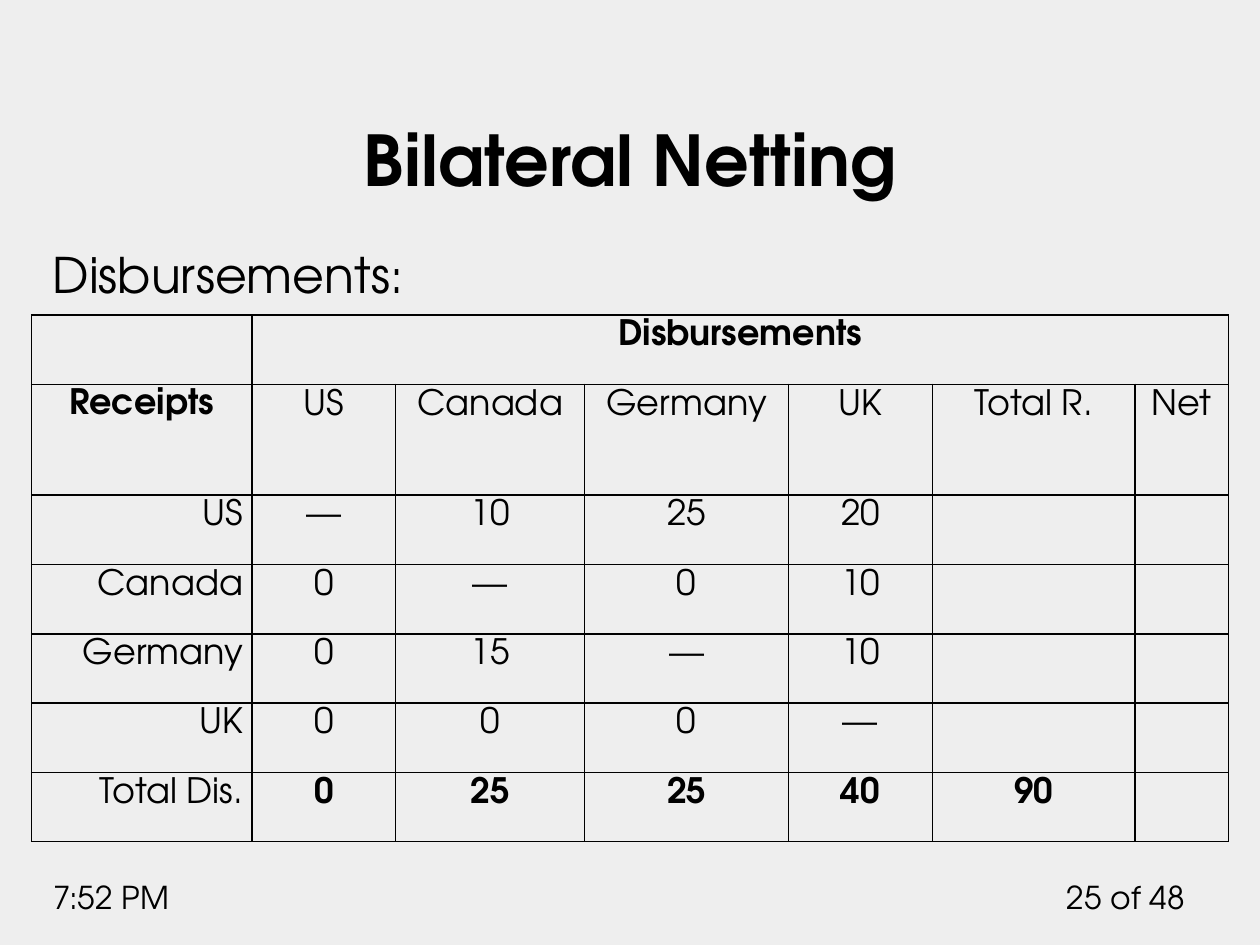
import pptx
import pptx.dml.color
import pptx.enum.text
import pptx.oxml
import pptx.oxml.ns
import pptx.util
from pptx.util import Inches

BLACK = pptx.dml.color.RGBColor(0x00, 0x00, 0x00)
PAPER = pptx.dml.color.RGBColor(0xEE, 0xEE, 0xEE)
FONT = "TeX Gyre Adventor"
ALIGN = pptx.enum.text.PP_ALIGN
ANCHOR = pptx.enum.text.MSO_ANCHOR

COLUMN_WIDTHS = [1.75, 1.14, 1.5, 1.62, 1.14, 1.61, 0.74]
ROW_HEIGHTS = [0.55, 0.88, 0.55, 0.55, 0.55, 0.55, 0.55]
NETTING = [
    ["", "Disbursements", "", "", "", "", ""],
    ["Receipts", "US", "Canada", "Germany", "UK", "Total R.", "Net"],
    ["US", "—", "10", "25", "20", "", ""],
    ["Canada", "0", "—", "0", "10", "", ""],
    ["Germany", "0", "15", "—", "10", "", ""],
    ["UK", "0", "0", "0", "—", "", ""],
    ["Total Dis.", "0", "25", "25", "40", "90", ""],
]


def write(paragraph, text, size=20, bold=False, align=ALIGN.LEFT, spacing=None):
    paragraph.alignment = align
    if spacing:
        paragraph.line_spacing = spacing
    run = paragraph.add_run()
    run.text = text
    run.font.name = FONT
    run.font.size = pptx.util.Pt(size)
    run.font.bold = bold
    run.font.color.rgb = BLACK


def add_title(slide, text):
    title = slide.shapes.title
    title.left, title.top = Inches(0.5), Inches(0.39)
    title.width, title.height = Inches(9), Inches(1.25)
    title.text_frame.vertical_anchor = ANCHOR.BOTTOM
    write(title.text_frame.paragraphs[0], text, size=40, bold=True, align=ALIGN.CENTER)


def add_label(slide, left, top, width, height):
    label = slide.shapes.add_textbox(Inches(left), Inches(top), Inches(width), Inches(height))
    label.text_frame.word_wrap = True
    return label.text_frame.paragraphs[0]


def add_borders(cell):
    properties = cell._tc.get_or_add_tcPr()
    namespace = pptx.oxml.ns.nsdecls("a")
    for position, side in enumerate(("lnL", "lnR", "lnT", "lnB")):
        border = pptx.oxml.parse_xml(
            f'<a:{side} {namespace} w="12700"><a:solidFill>'
            f'<a:srgbClr val="{BLACK}"/></a:solidFill></a:{side}>'
        )
        properties.insert(position, border)


def fill_cell(cell, text, row, column):
    cell.fill.background()
    add_borders(cell)
    if not text:
        return
    cell.margin_left = cell.margin_right = Inches(0.07)
    cell.margin_top = cell.margin_bottom = 0
    is_country = column == 0 and row > 1
    is_total = row == len(NETTING) - 1 and column > 0
    write(
        cell.text_frame.paragraphs[0],
        text,
        bold=is_total or text in ("Disbursements", "Receipts"),
        align=ALIGN.RIGHT if is_country else ALIGN.CENTER,
        spacing=1.15,
    )


def add_netting_table(slide):
    table = slide.shapes.add_table(
        len(ROW_HEIGHTS), len(COLUMN_WIDTHS),
        Inches(0.25), Inches(2.5), Inches(9.5), Inches(4.18),
    ).table
    table.first_row = False
    table.horz_banding = False
    for column, width in zip(table.columns, COLUMN_WIDTHS):
        column.width = Inches(width)
    for row, height in zip(table.rows, ROW_HEIGHTS):
        row.height = Inches(height)
    table.cell(0, 1).merge(table.cell(0, len(COLUMN_WIDTHS) - 1))
    for row, values in enumerate(NETTING):
        for column, text in enumerate(values):
            fill_cell(table.cell(row, column), text, row, column)


def main():
    presentation = pptx.Presentation()
    presentation.slide_width = Inches(10)
    presentation.slide_height = Inches(7.5)
    slide = presentation.slides.add_slide(presentation.slide_layouts[5])
    slide.background.fill.solid()
    slide.background.fill.fore_color.rgb = PAPER

    write(add_label(slide, 8.33, 6.92, 1.17, 0.4), "25 of 48", size=18, align=ALIGN.RIGHT)
    write(add_label(slide, 0.33, 6.92, 1.58, 0.4), "7:52 PM", size=18)
    heading = add_label(slide, 0.32, 1.89, 9.35, 0.53)
    write(heading, "Disbursements", size=28)
    write(heading, ":", size=27)
    add_title(slide, "Bilateral Netting")
    add_netting_table(slide)
    presentation.save("out.pptx")


if __name__ == "__main__":
    main()
